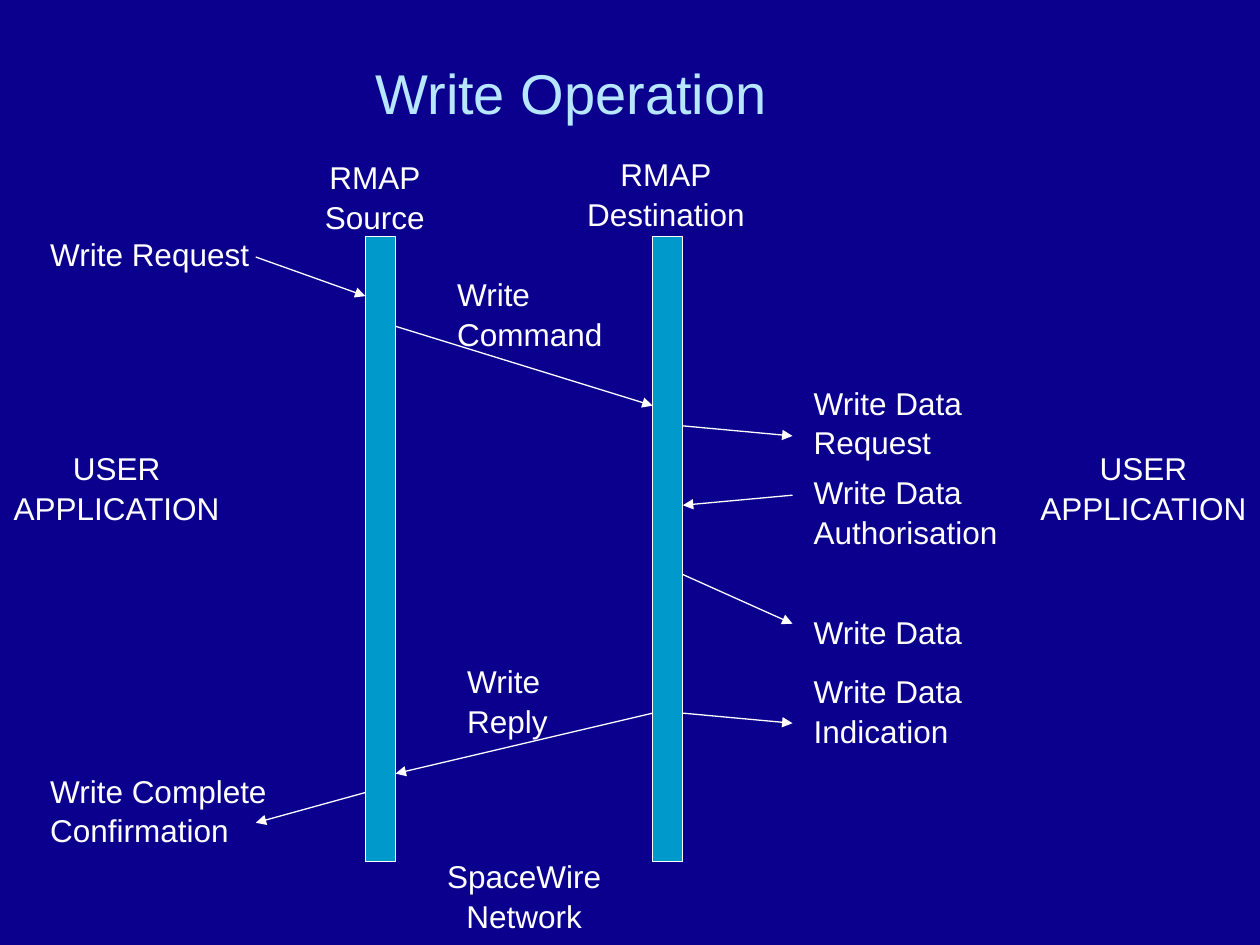
from pptx import Presentation
from pptx.dml.color import RGBColor
from pptx.enum.shapes import MSO_CONNECTOR as Connector, MSO_SHAPE as Shape
from pptx.enum.text import MSO_ANCHOR as Anchor, MSO_AUTO_SIZE as AutoSize, PP_ALIGN as Align
from pptx.oxml.ns import qn
from pptx.util import Inches, Pt
from lxml import etree

NAVY = RGBColor(0x0B, 0x00, 0x8E)
PALE_BLUE = RGBColor(0xB7, 0xE7, 0xFF)
TEAL = RGBColor(0x00, 0x99, 0xCC)
WHITE = RGBColor(0xFF, 0xFF, 0xFF)
TITLE_FORMAT = {"name": "Arial", "size": Pt(32), "bold": False}
LABEL_FORMAT = {"name": "Arial", "size": Pt(18)}


def write_lines(frame, lines, align, font_format, color):
    for index, line in enumerate(lines):
        para = frame.paragraphs[0] if index == 0 else frame.add_paragraph()
        para.alignment = align
        span = para.add_run()
        span.text = line
        for name, value in font_format.items():
            setattr(span.font, name, value)
        span.font.color.rgb = color


deck = Presentation()
deck.slide_width, deck.slide_height = Inches(10), Inches(7.5)
page = deck.slides.add_slide(deck.slide_layouts[5])
page.background.fill.solid()
page.background.fill.fore_color.rgb = NAVY

# Title
title = page.shapes.title
title.left, title.top = Inches(2.88), Inches(0.28)
title.width, title.height = Inches(7.12), Inches(0.9)
title.text_frame.vertical_anchor = Anchor.MIDDLE
write_lines(title.text_frame, ["Write Operation"], Align.LEFT, TITLE_FORMAT, PALE_BLUE)

# Timelines of the source and the destination
BAR_WIDTH = 0.24
SOURCE_LEFT, DESTINATION_LEFT = 2.9, 5.18
SOURCE_RIGHT = SOURCE_LEFT + BAR_WIDTH
DESTINATION_RIGHT = DESTINATION_LEFT + BAR_WIDTH
for left in (SOURCE_LEFT, DESTINATION_LEFT):
    bar = page.shapes.add_shape(
        Shape.RECTANGLE, Inches(left), Inches(1.88), Inches(BAR_WIDTH), Inches(4.96))
    bar.shadow.inherit = False
    bar.fill.solid()
    bar.fill.fore_color.rgb = TEAL
    bar.line.color.rgb = WHITE
    bar.line.width = Pt(0.75)

# Message arrows: start x, start y, end x, end y
USER_LEFT, USER_RIGHT = 2.03, 6.29
arrows = [
    (USER_LEFT, 2.04, SOURCE_LEFT, 2.35),
    (SOURCE_RIGHT, 2.59, DESTINATION_LEFT, 3.22),
    (DESTINATION_RIGHT, 3.38, USER_RIGHT, 3.46),
    (USER_RIGHT, 3.93, DESTINATION_RIGHT, 4.01),
    (DESTINATION_RIGHT, 4.56, USER_RIGHT, 4.95),
    (DESTINATION_RIGHT, 5.66, USER_RIGHT, 5.74),
    (DESTINATION_LEFT, 5.66, SOURCE_RIGHT, 6.14),
    (SOURCE_LEFT, 6.29, USER_LEFT, 6.53),
]
for ends in arrows:
    arrow = page.shapes.add_connector(Connector.STRAIGHT, *map(Inches, ends))
    arrow.line.color.rgb = WHITE
    arrow.line.width = Pt(0.75)
    etree.SubElement(arrow.line._get_or_add_ln(), qn("a:tailEnd"), type="triangle")
    etree.SubElement(arrow._element.spPr, qn("a:effectLst"))

# Labels: left, top, width, alignment, lines
REQUEST_LEFT, DATA_LEFT = 0.3, 6.36
labels = [
    (REQUEST_LEFT, 1.8, 1.78, Align.LEFT, ["Write Request"]),
    (REQUEST_LEFT, 6.06, 1.92, Align.LEFT, ["Write Complete", "Confirmation"]),
    (3.53, 2.12, 1.35, Align.LEFT, ["Write", "Command"]),
    (3.61, 5.19, 0.84, Align.LEFT, ["Write", "Reply"]),
    (DATA_LEFT, 2.98, 1.38, Align.LEFT, ["Write Data", "Request"]),
    (DATA_LEFT, 3.69, 1.66, Align.LEFT, ["Write Data", "Authorisation"]),
    (DATA_LEFT, 4.8, 1.38, Align.LEFT, ["Write Data"]),
    (DATA_LEFT, 5.27, 1.38, Align.LEFT, ["Write Data", "Indication"]),
    (2.48, 1.19, 0.99, Align.CENTER, ["RMAP", "Source"]),
    (4.56, 1.17, 1.45, Align.CENTER, ["RMAP", "Destination"]),
    (0, 3.5, 1.85, Align.CENTER, ["USER", "APPLICATION"]),
    (8.15, 3.5, 1.85, Align.CENTER, ["USER", "APPLICATION"]),
    (3.45, 6.74, 1.42, Align.CENTER, ["SpaceWire", "Network"]),
]
for left, top, width, align, lines in labels:
    height = 0.1 + 0.3 * len(lines)
    box = page.shapes.add_textbox(Inches(left), Inches(top), Inches(width), Inches(height))
    box.text_frame.word_wrap = False
    box.text_frame.auto_size = AutoSize.SHAPE_TO_FIT_TEXT
    write_lines(box.text_frame, lines, align, LABEL_FORMAT, WHITE)
    for para in box.text_frame.paragraphs:
        para.line_spacing = 1.05

deck.save("out.pptx")
